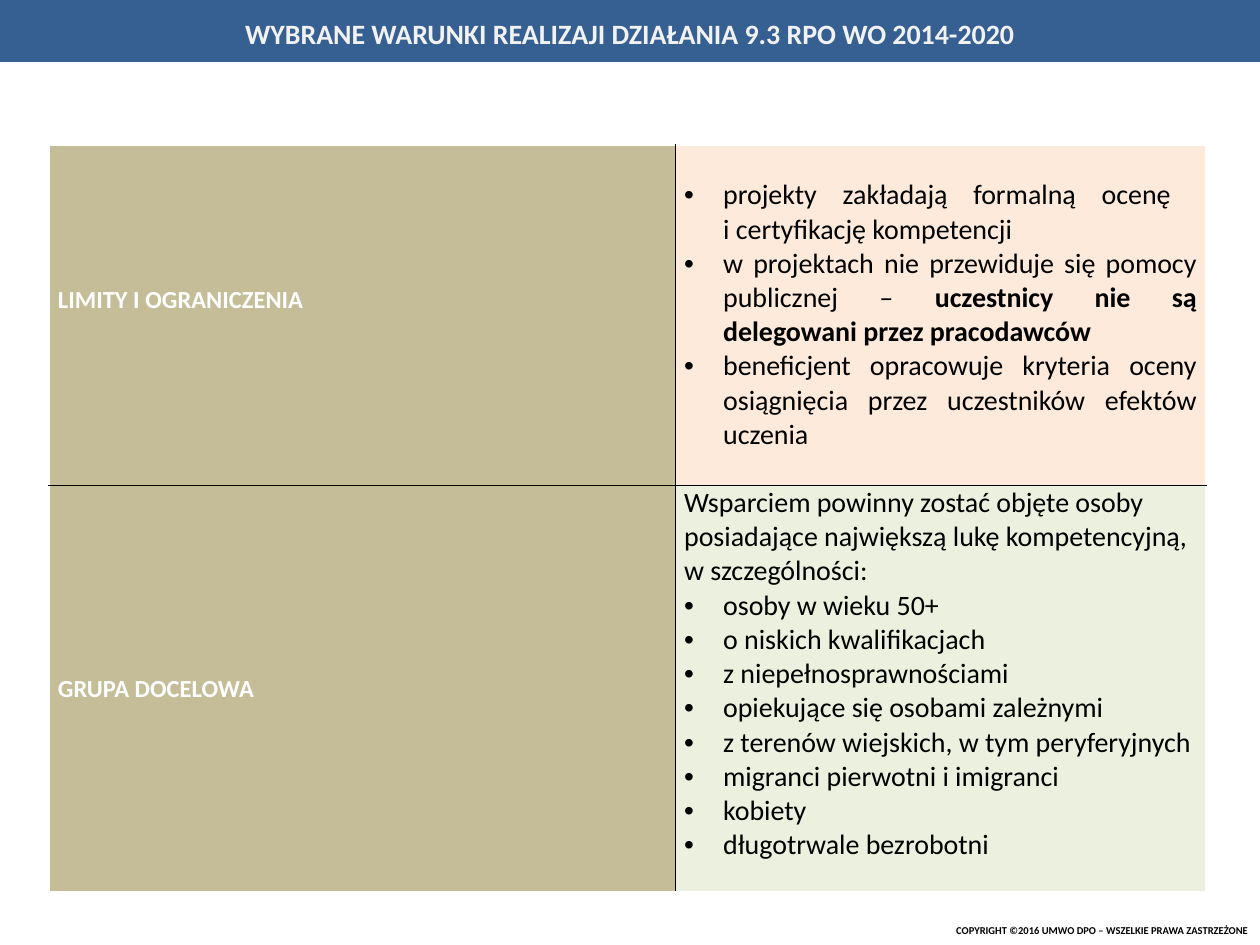
from lxml import etree
from pptx import Presentation
from pptx.dml.color import RGBColor
from pptx.enum import shapes, text
from pptx.oxml import ns
from pptx.util import Inches, Pt

BLUE = RGBColor(0x37, 0x60, 0x92)
KHAKI = RGBColor(0xC4, 0xBD, 0x97)
PEACH = RGBColor(0xFD, 0xEA, 0xDA)
GREEN = RGBColor(0xEB, 0xF1, 0xDE)
OFF_WHITE = RGBColor(0xF2, 0xF2, 0xF2)
WHITE = RGBColor(0xFF, 0xFF, 0xFF)
BLACK = RGBColor(0, 0, 0)

ALIGN = text.PP_ALIGN
MIDDLE = text.MSO_ANCHOR.MIDDLE
INDENT = Inches(0.31)
OUTER, INNER = (WHITE, 1), (BLACK, 0.5)

LIMITS = [
    [("projekty zakładają formalną ocenę \ni certyfikację kompetencji", False)],
    [("w projektach nie przewiduje się pomocy publicznej – ", False),
     ("uczestnicy nie są delegowani przez pracodawców", True)],
    [("beneficjent opracowuje kryteria oceny osiągnięcia przez uczestników "
      "efektów uczenia", False)],
]
TARGET_INTRO = ("Wsparciem powinny zostać objęte osoby posiadające największą "
                "lukę kompetencyjną, w szczególności:")
TARGET_GROUPS = [
    "osoby w wieku 50+",
    "o niskich kwalifikacjach",
    "z niepełnosprawnościami",
    "opiekujące się osobami zależnymi",
    "z terenów wiejskich, w tym peryferyjnych",
    "migranci pierwotni i imigranci",
    "kobiety",
    "długotrwale bezrobotni",
]


def set_attrs(obj, values):
    for name, value in values.items():
        setattr(obj, name, value)


def add_paragraph(tf, runs, size, color, bullet=False, **fmt):
    """Fill the first paragraph if it is still empty, otherwise add one."""
    p = tf.paragraphs[0] if not tf.paragraphs[0].runs else tf.add_paragraph()
    set_attrs(p, fmt)
    for content, bold in runs:
        for i, line in enumerate(content.split("\n")):
            if i:
                p.add_line_break()
            r = p.add_run()
            r.text = line
            set_attrs(r.font, {"name": "Calibri", "size": Pt(size), "bold": bold})
            r.font.color.rgb = color
    if bullet:
        pPr = p._p.get_or_add_pPr()
        pPr.set("marL", str(INDENT))
        pPr.set("indent", str(-INDENT))
        font = etree.SubElement(pPr, ns.qn("a:buFont"))
        font.set("typeface", "Arial")
        etree.SubElement(pPr, ns.qn("a:buChar")).set("char", "•")


def add_border(cell, side, color, width):
    ln = etree.SubElement(cell._tc.get_or_add_tcPr(), ns.qn("a:ln" + side))
    ln.set("w", str(Pt(width)))
    fill = etree.SubElement(ln, ns.qn("a:solidFill"))
    etree.SubElement(fill, ns.qn("a:srgbClr")).set("val", str(color))


def format_cell(cell, row, col, fill, bottom=0):
    set_attrs(cell, {
        "vertical_anchor": MIDDLE,
        "margin_left": Inches(0.07), "margin_right": Inches(0.07),
        "margin_top": 0, "margin_bottom": Inches(bottom),
    })
    # White on the outside of the table, thin black between the cells
    inner = {"L": col == 1, "R": col == 0, "T": row == 1, "B": row == 0}
    for side, is_inner in inner.items():
        add_border(cell, side, *(INNER if is_inner else OUTER))
    cell.fill.solid()
    cell.fill.fore_color.rgb = fill
    return cell.text_frame


def add_title_bar(s):
    sp = s.shapes.add_shape(shapes.MSO_SHAPE.PARALLELOGRAM,
                            0, 0, Inches(10), Inches(0.49))
    sp.adjustments[0] = 0
    sp.shadow.inherit = False
    sp.fill.solid()
    sp.fill.fore_color.rgb = BLUE
    sp.line.fill.background()
    tf = sp.text_frame
    set_attrs(tf, {"word_wrap": True, "vertical_anchor": MIDDLE,
                   "margin_left": 0, "margin_right": 0})
    add_paragraph(tf, [("WYBRANE WARUNKI REALIZAJI DZIAŁANIA 9.3 RPO WO 2014-2020", True)],
                  16, OFF_WHITE, alignment=ALIGN.CENTER, line_spacing=1.15)


def add_conditions_table(s):
    widths, heights = (4.97, 4.21), (2.7, 3.23)
    frame = s.shapes.add_table(2, 2, Inches(0.39), Inches(1.15),
                               Inches(sum(widths)), Inches(sum(heights)))
    table = frame.table
    set_attrs(table, {"first_row": False, "horz_banding": False})
    for column, width in zip(table.columns, widths):
        column.width = Inches(width)
    for row, height in zip(table.rows, heights):
        row.height = Inches(height)

    # Row labels
    labels = [("LIMITY I OGRANICZENIA", 0.23), ("GRUPA DOCELOWA", 0)]
    for row, (label, bottom) in enumerate(labels):
        tf = format_cell(table.cell(row, 0), row, 0, KHAKI, bottom)
        add_paragraph(tf, [(label, True)], 14, WHITE, space_after=Pt(3))

    # Limits
    tf = format_cell(table.cell(0, 1), 0, 1, PEACH)
    for runs in LIMITS:
        add_paragraph(tf, runs, 16, BLACK, bullet=True, alignment=ALIGN.JUSTIFY)

    # Target group
    tf = format_cell(table.cell(1, 1), 1, 1, GREEN, 0.23)
    add_paragraph(tf, [(TARGET_INTRO, False)], 16, BLACK)
    for group in TARGET_GROUPS:
        add_paragraph(tf, [(group, False)], 16, BLACK, bullet=True)


def add_copyright(s):
    tf = s.shapes.add_textbox(Inches(6.56), Inches(7.28),
                              Inches(3.44), Inches(0.2)).text_frame
    set_attrs(tf, {"word_wrap": True, "vertical_anchor": MIDDLE})
    add_paragraph(tf, [("COPYRIGHT ©2016 UMWO DPO – WSZELKIE PRAWA ZASTRZEŻONE", True)],
                  6, BLACK, alignment=ALIGN.RIGHT)


def main():
    prs = Presentation()
    set_attrs(prs, {"slide_width": Inches(10), "slide_height": Inches(7.5)})
    s = prs.slides.add_slide(prs.slide_layouts[6])
    add_conditions_table(s)
    add_copyright(s)
    add_title_bar(s)
    prs.save("out.pptx")


if __name__ == "__main__":
    main()
